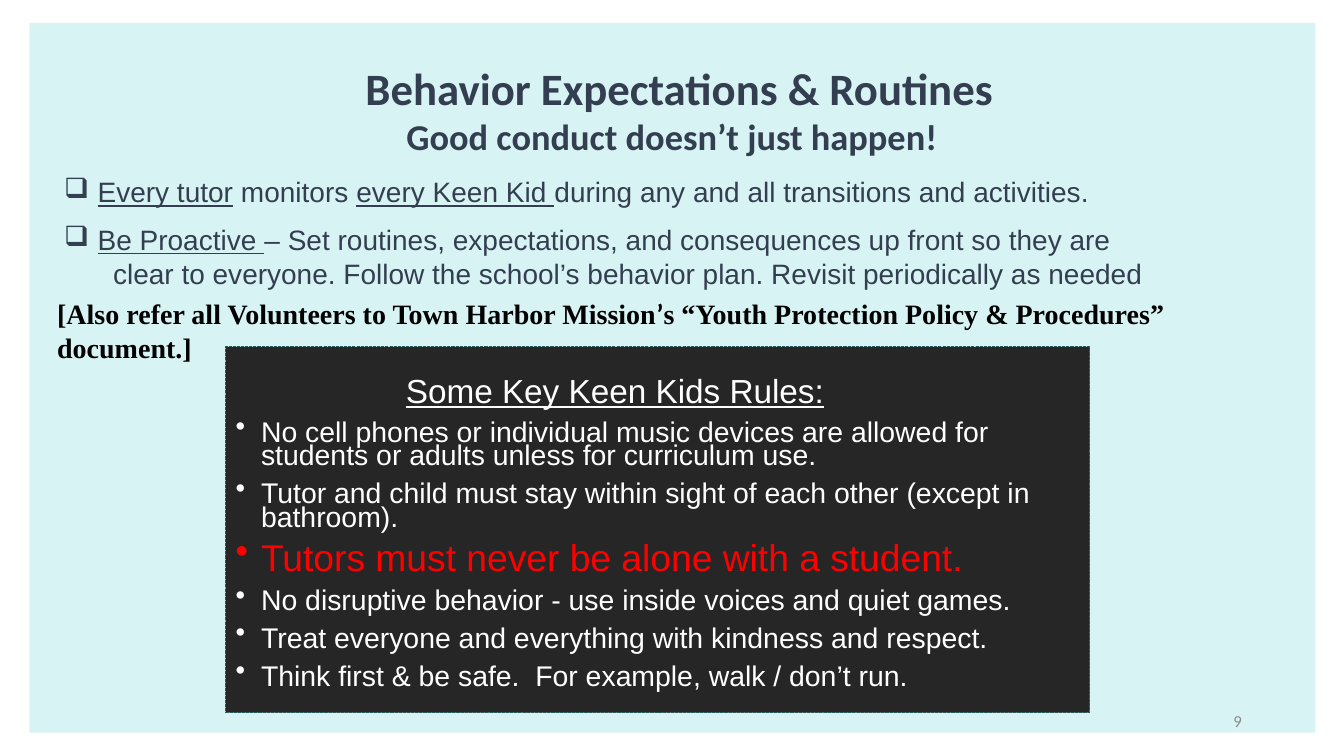
"""Build the slide on behavior expectations and routines."""
import pptx
import pptx.dml.color
import pptx.enum.dml
import pptx.enum.shapes
import pptx.enum.text
import pptx.util
from lxml import etree

Cm, Pt = pptx.util.Cm, pptx.util.Pt
ALIGN = pptx.enum.text.PP_ALIGN
NAVY, WHITE, RED = "333F50", "FFFFFF", "FF0000"

HEAD = {"size": 32, "font": "Calibri", "color": NAVY, "bold": True}
SUB = {**HEAD, "size": 26}
BODY = {"size": 20, "font": "Arial", "color": NAVY}
LINK = {**BODY, "under": True}
NOTE = {"size": 20, "font": "Times New Roman", "color": "000000", "bold": True}
RULE = {"size": 20.3, "font": "Arial", "color": WHITE}
ALERT = {**RULE, "size": 26.6, "color": RED}
TOPIC = {**RULE, "size": 23.8, "under": True}
PAGE = {"size": 12, "font": "Calibri", "color": "8C8C8C"}

CHECK = {"left": 1.47, "hang": 0.84, "mark": "❑"}
DOT = {"left": 0.64, "hang": 0.64, "mark": "•", "before": 10, "lines": 0.7}

INTRO = [
    ([("Behavior Expectations & Routines", HEAD)],
     {"align": ALIGN.CENTER, "left": 0.36}),
    ([("Good conduct doesn’t just happen!", SUB)], {"align": ALIGN.CENTER}),
    ([("Every tutor", LINK), (" monitors ", BODY), ("every Keen Kid ", LINK),
      ("during any and all transitions and activities.", BODY)],
     {**CHECK, "before": 12}),
    ([("Be Proactive ", LINK),
      ("– Set routines, expectations, and consequences up front so they are", BODY)],
     {**CHECK, "before": 10}),
    ([("clear to everyone. Follow the school’s behavior plan. "
       "Revisit periodically as needed", BODY)], {"left": 1.86}),
]
RULES = [
    ([("Some Key Keen Kids Rules:", TOPIC)], {"left": 4.29, "lines": 0.7}),
] + [([(text, style)], DOT) for text, style in [
    ("No cell phones or individual music devices are allowed for "
     "students or adults unless for curriculum use.", RULE),
    ("Tutor and child must stay within sight of each other "
     "(except in bathroom).", RULE),
    ("Tutors must never be alone with a student.", ALERT),
    ("No disruptive behavior - use inside voices and quiet games.", RULE),
    ("Treat everyone and everything with kindness and respect.", RULE),
    ("Think first & be safe.  For example, walk / don’t run.", RULE),
]]
REFER = [([
    ("[Also refer all Volunteers to Town Harbor Mission", NOTE),
    ("’", {**NOTE, "font": "Calibri"}),
    ("s “Youth Protection Policy & Procedures” document.]", NOTE),
], {"left": 1.27})]
NUMBER = [([("9", PAGE)], {"align": ALIGN.RIGHT})]


def tint(code):
    return pptx.dml.color.RGBColor.from_string(code)


def fill(frame, paras, top=0.13, anchor=pptx.enum.text.MSO_ANCHOR.TOP):
    frame.word_wrap = True
    frame.margin_top = Cm(top)
    frame.vertical_anchor = anchor
    for i, (runs, form) in enumerate(paras):
        para = frame.paragraphs[0] if i == 0 else frame.add_paragraph()
        para.alignment = form.get("align", ALIGN.LEFT)
        para.space_before = Pt(form.get("before", 0))
        para.line_spacing = form.get("lines", 1.0)
        props = para._p.get_or_add_pPr()
        props.set("marL", str(Cm(form.get("left", 0))))
        props.set("indent", str(-Cm(form.get("hang", 0))))
        if "mark" in form:
            tag = pptx.oxml.ns.qn("a:buChar")
            etree.SubElement(props, tag).set("char", form["mark"])
        for text, style in runs:
            run = para.add_run()
            run.text = text
            font = run.font
            font.size, font.name = Pt(style["size"]), style["font"]
            font.color.rgb = tint(style["color"])
            font.bold = style.get("bold", False)
            font.underline = style.get("under", False)


def panel(slide, box, color):
    kind = pptx.enum.shapes.MSO_SHAPE.RECTANGLE
    shape = slide.shapes.add_shape(kind, *map(Cm, box))
    shape.shadow.inherit = False
    shape.fill.solid()
    shape.fill.fore_color.rgb = tint(color)
    shape.line.fill.background()
    return shape


def label(slide, box, paras, **opts):
    fill(slide.shapes.add_textbox(*map(Cm, box)).text_frame, paras, **opts)


def main():
    deck = pptx.Presentation()
    deck.slide_width, deck.slide_height = Cm(33.87), Cm(19.05)
    slide = deck.slides.add_slide(deck.slide_layouts[6])
    panel(slide, (0.74, 0.58, 32.41, 17.88), "D8F3F4")
    label(slide, (0.74, 1.4, 32.41, 6.93), INTRO)
    card = panel(slide, (5.69, 8.74, 21.77, 9.22), "262626")
    card.line.color.rgb = tint("265858")
    card.line.width = Pt(0.75)
    card.line.dash_style = pptx.enum.dml.MSO_LINE.SQUARE_DOT
    fill(card.text_frame, RULES, top=0.86)
    label(slide, (23.93, 17.65, 7.62, 1.02), NUMBER,
          anchor=pptx.enum.text.MSO_ANCHOR.MIDDLE)
    label(slide, (-0.08, 7.34, 32, 1.12), REFER)
    deck.save("out.pptx")


if __name__ == "__main__":
    main()
